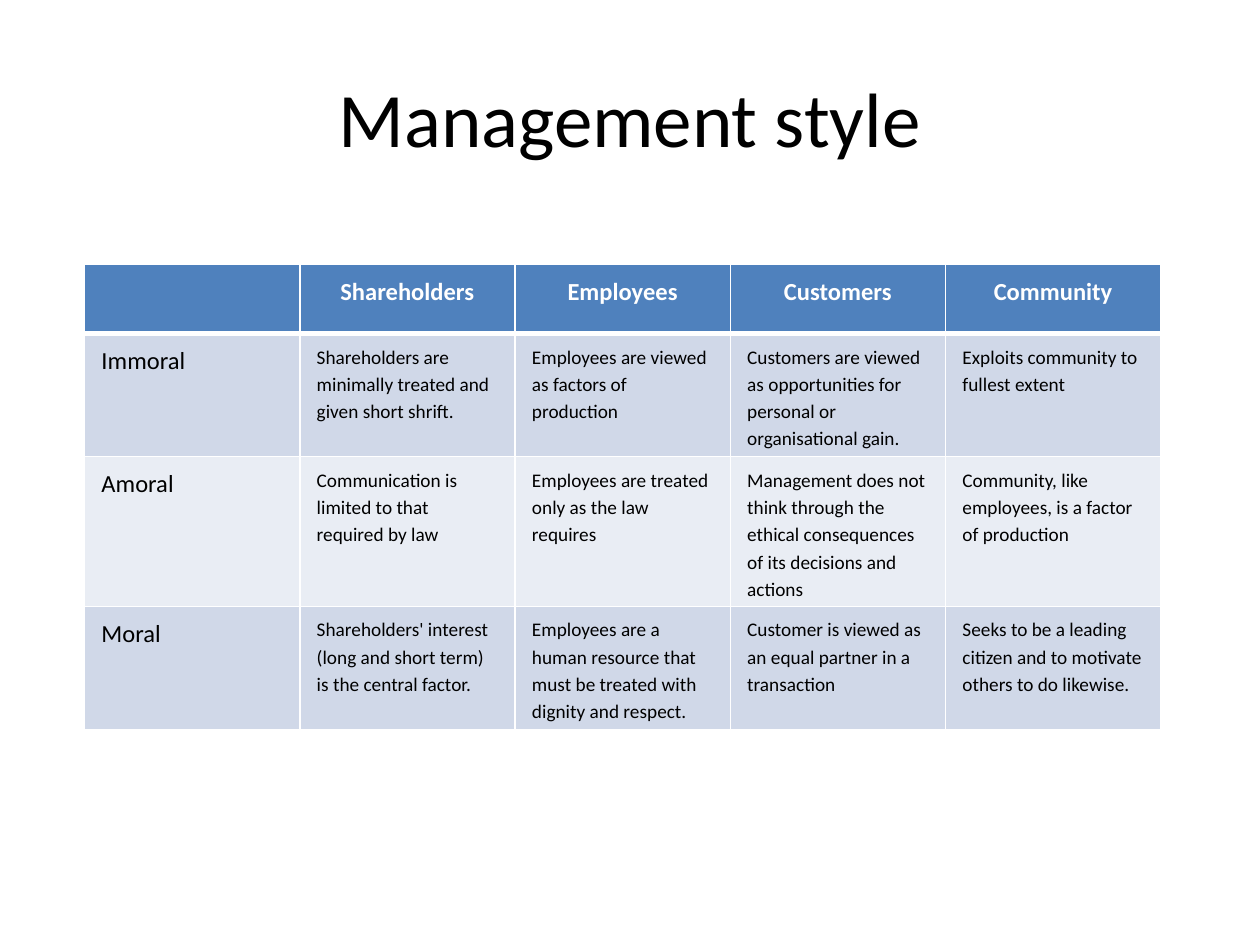
from dataclasses import dataclass

from lxml.etree import SubElement
from pptx import Presentation
from pptx.dml.color import RGBColor
from pptx.enum.text import MSO_ANCHOR as Anchor, PP_ALIGN as Align
from pptx.oxml.ns import qn
from pptx.util import Pt

FONT = "Calibri"
BLACK = RGBColor(0x00, 0x00, 0x00)
WHITE = RGBColor(0xFF, 0xFF, 0xFF)
HEADER_BLUE = RGBColor(0x4F, 0x81, 0xBD)
BAND_DARK = RGBColor(0xD0, 0xD8, 0xE8)
BAND_LIGHT = RGBColor(0xE9, 0xED, 0xF4)

COLUMN_WIDTH = 123
ROW_HEIGHTS = [39.4, 69.3, 83.7, 69.3]
THIN, THICK = 1, 3


@dataclass(frozen=True)
class TextStyle:
    size: float
    color: RGBColor = BLACK
    bold: bool = False
    align: Align = Align.LEFT
    line_spacing: float = 1.15


TITLE = TextStyle(44, align=Align.CENTER, line_spacing=1.0)
HEADER = TextStyle(14, WHITE, True, Align.CENTER)
ROW_LABEL = TextStyle(14, align=Align.JUSTIFY)
BODY = TextStyle(11)

ROWS = [
    ["", "Shareholders", "Employees", "Customers", "Community"],
    ["Immoral",
     "Shareholders are minimally treated and given short shrift.",
     "Employees are viewed as factors of production",
     "Customers are viewed as opportunities for personal or organisational gain.",
     "Exploits community to fullest extent"],
    ["Amoral",
     "Communication is limited to that required by law",
     "Employees are treated only as the law requires",
     "Management does not think through the ethical consequences of its "
     "decisions and actions",
     "Community, like employees, is a factor of production"],
    ["Moral",
     "Shareholders' interest (long and short term) is the central factor.",
     "Employees are a human resource that must be treated with dignity and respect.",
     "Customer is viewed as an equal partner in a transaction",
     "Seeks to be a leading citizen and to motivate others to do likewise."],
]


def write_text(text_frame, text: str, style: TextStyle) -> None:
    text_frame.text = text
    text_frame.word_wrap = True
    paragraph = text_frame.paragraphs[0]
    paragraph.alignment = style.align
    paragraph.line_spacing = style.line_spacing
    for run in paragraph.runs:
        run.font.name = FONT
        run.font.size = Pt(style.size)
        run.font.bold = style.bold
        run.font.color.rgb = style.color


def add_borders(cell, top: float, bottom: float) -> None:
    properties = cell._tc.get_or_add_tcPr()
    for side, width in (("L", THIN), ("R", THIN), ("T", top), ("B", bottom)):
        line = SubElement(properties, qn(f"a:ln{side}"), w=str(Pt(width)))
        fill = SubElement(line, qn("a:solidFill"))
        SubElement(fill, qn("a:srgbClr"), val=str(WHITE))


def draw_cell(cell, row: int, column: int) -> None:
    if row == 0:
        style, color = HEADER, HEADER_BLUE
    else:
        style = ROW_LABEL if column == 0 else BODY
        color = BAND_DARK if row % 2 else BAND_LIGHT
    write_text(cell.text_frame, ROWS[row][column], style)
    cell.margin_left = cell.margin_right = Pt(9.72)
    cell.margin_top = cell.margin_bottom = Pt(4.86)
    # Borders come before the fill in the cell properties
    add_borders(cell, THICK if row == 1 else THIN, THICK if row == 0 else THIN)
    cell.fill.solid()
    cell.fill.fore_color.rgb = color


def draw_title(slide) -> None:
    title = slide.shapes.add_textbox(Pt(36), Pt(21.6), Pt(648), Pt(90))
    write_text(title.text_frame, "Management style", TITLE)
    title.text_frame.vertical_anchor = Anchor.MIDDLE


def draw_table(slide) -> None:
    column_count = len(ROWS[0])
    table = slide.shapes.add_table(
        len(ROWS), column_count, Pt(48.3), Pt(151.2),
        Pt(COLUMN_WIDTH * column_count), Pt(sum(ROW_HEIGHTS))).table
    for column in table.columns:
        column.width = Pt(COLUMN_WIDTH)
    for row, height in zip(table.rows, ROW_HEIGHTS):
        row.height = Pt(height)
    for row in range(len(ROWS)):
        for column in range(column_count):
            draw_cell(table.cell(row, column), row, column)


def main() -> None:
    presentation = Presentation()
    presentation.slide_width, presentation.slide_height = Pt(720), Pt(540)
    slide = presentation.slides.add_slide(presentation.slide_layouts[6])
    draw_title(slide)
    draw_table(slide)
    presentation.save("out.pptx")


if __name__ == "__main__":
    main()
